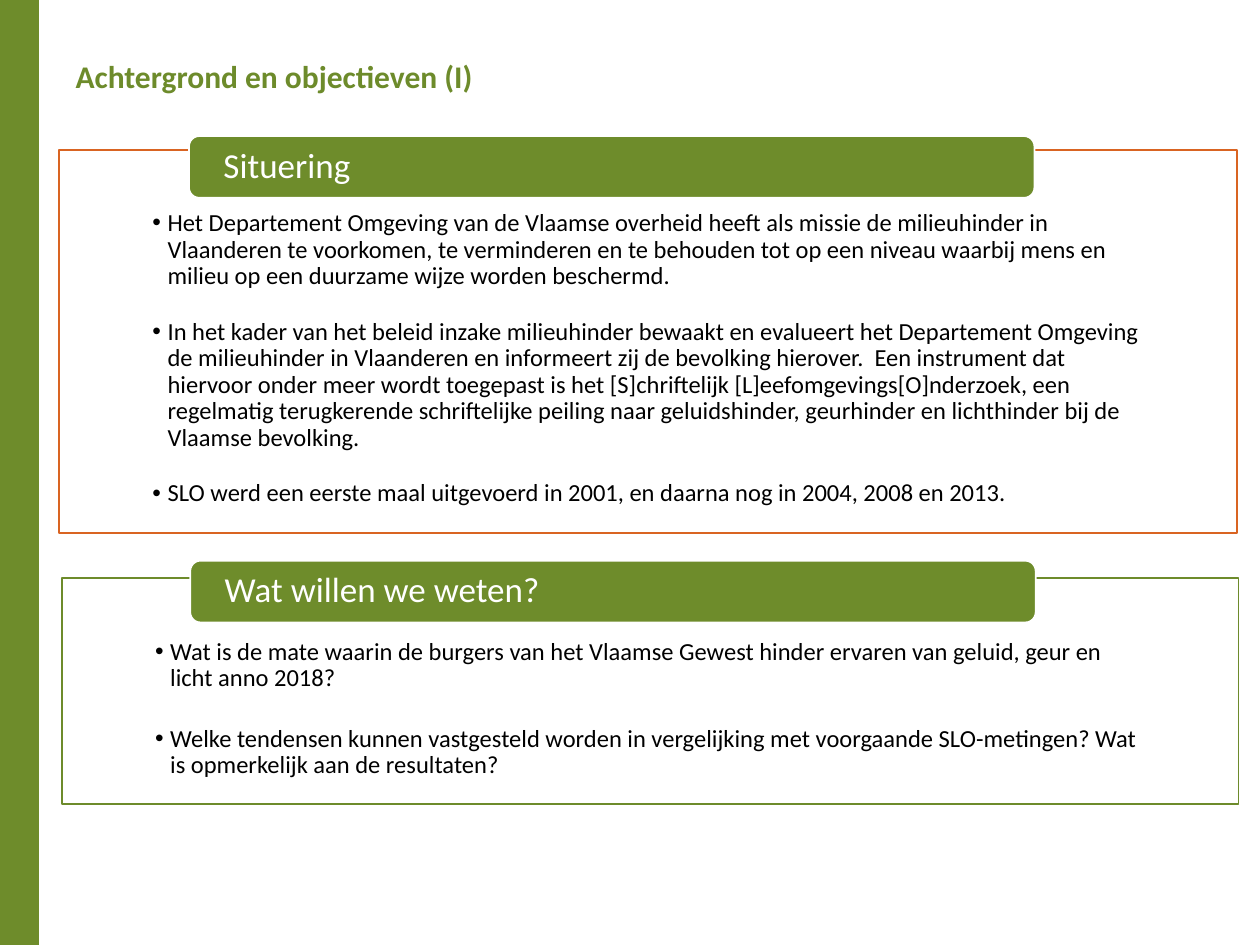
import pptx
import pptx.dml.color
import pptx.enum.shapes
import pptx.enum.text
import pptx.util
from lxml import etree

Inches, Pt = pptx.util.Inches, pptx.util.Pt
RGB = pptx.dml.color.RGBColor.from_string
SHAPE = pptx.enum.shapes.MSO_SHAPE
ALIGN = pptx.enum.text.PP_ALIGN
ANCHOR = pptx.enum.text.MSO_ANCHOR
AUTOSIZE = pptx.enum.text.MSO_AUTO_SIZE


class Theme:
    font = "Calibri"
    bar, title = RGB("6E8C2B"), RGB("6D8B2B")
    orange, white, black = RGB("D96422"), RGB("FFFFFF"), RGB("000000")
    title_size, heading_size, body_size = Pt(18), Pt(20), Pt(14)


def style(paragraph, size, color, bold=False):
    paragraph.font.name = Theme.font
    paragraph.font.size = size
    paragraph.font.bold = bold
    paragraph.font.color.rgb = color


def add_bullet(paragraph):
    properties = paragraph._p.get_or_add_pPr()
    properties.set("marL", str(Inches(0.12)))
    properties.set("indent", str(-Inches(0.12)))
    bullet = etree.SubElement(properties, pptx.oxml.ns.qn("a:buChar"))
    bullet.set("char", "•")


# Frame and heading as (left, top, width, height), then the bullets
sections = [
    ("Situering", (0.47, 1.19, 9.35, 3.04), (1.5, 1.08, 6.71, 0.49), Theme.orange, Pt(16.7), [
        "Het Departement Omgeving van de Vlaamse overheid heeft als missie de milieuhinder in "
        "Vlaanderen te voorkomen, te verminderen en te behouden tot op een niveau waarbij mens en "
        "milieu op een duurzame wijze worden beschermd.",
        "In het kader van het beleid inzake milieuhinder bewaakt en evalueert het Departement "
        "Omgeving de milieuhinder in Vlaanderen en informeert zij de bevolking hierover.  Een "
        "instrument dat hiervoor onder meer wordt toegepast is het [S]chriftelijk "
        "[L]eefomgevings[O]nderzoek, een regelmatig terugkerende schriftelijke peiling naar "
        "geluidshinder, geurhinder en lichthinder bij de Vlaamse bevolking.",
        "SLO werd een eerste maal uitgevoerd in 2001, en daarna nog in 2004, 2008 en 2013.",
    ]),
    ("Wat willen we weten?", (0.49, 4.59, 9.34, 1.79), (1.51, 4.45, 6.71, 0.49), Theme.title, Pt(19.5), [
        "Wat is de mate waarin de burgers van het Vlaamse Gewest hinder ervaren van geluid, geur en "
        "licht anno 2018?",
        "Welke tendensen kunnen vastgesteld worden in vergelijking met voorgaande SLO-metingen? Wat "
        "is opmerkelijk aan de resultaten?",
    ]),
]

presentation = pptx.Presentation()
presentation.slide_width, presentation.slide_height = Inches(10), Inches(7.5)
slide = presentation.slides.add_slide(presentation.slide_layouts[3])

# Green side bar
side_bar = slide.shapes.add_shape(SHAPE.RECTANGLE, 0, 0, Inches(0.31), Inches(7.5))
side_bar.shadow.inherit = False
side_bar.fill.solid()
side_bar.fill.fore_color.rgb = Theme.bar
side_bar.line.fill.background()

# Title
title = slide.shapes.title
title.left, title.top, title.width, title.height = map(Inches, (0.5, 0.4, 3.38, 0.4))
title.text_frame.text = "Achtergrond en objectieven (I)"
title.text_frame.word_wrap = False
title.text_frame.auto_size = AUTOSIZE.NONE
title.text_frame.vertical_anchor = ANCHOR.MIDDLE
title.text_frame.paragraphs[0].alignment = ALIGN.LEFT
style(title.text_frame.paragraphs[0], Theme.title_size, Theme.title, bold=True)

# Framed lists, each with a heading over its top edge
for index, (heading, frame_box, heading_box, frame_color, gap, points) in enumerate(sections, 1):
    frame = slide.placeholders[index]
    frame.left, frame.top, frame.width, frame.height = map(Inches, frame_box)
    frame.fill.solid()
    frame.fill.fore_color.rgb = Theme.white
    frame.line.color.rgb = frame_color
    frame.line.width = Pt(1)
    content = frame.text_frame
    content.word_wrap = True
    content.auto_size = AUTOSIZE.NONE
    content.vertical_anchor = ANCHOR.TOP
    content.margin_left = content.margin_right = Inches(0.74)
    content.margin_top, content.margin_bottom = Inches(0.48), Inches(0.11)
    for number, point in enumerate(points):
        paragraph = content.add_paragraph() if number else content.paragraphs[0]
        paragraph.text = point
        add_bullet(paragraph)
        paragraph.line_spacing = 0.9
        paragraph.space_before = gap if number else Pt(0)
        paragraph.space_after = Pt(0)
        style(paragraph, Theme.body_size, Theme.black)

    banner = slide.shapes.add_shape(SHAPE.ROUNDED_RECTANGLE, *map(Inches, heading_box))
    banner.shadow.inherit = False
    banner.fill.solid()
    banner.fill.fore_color.rgb = Theme.bar
    banner.line.color.rgb = Theme.white
    banner.line.width = Pt(1)
    label = banner.text_frame
    label.text = heading
    label.word_wrap = True
    label.vertical_anchor = ANCHOR.MIDDLE
    label.margin_left = label.margin_right = Inches(0.25)
    label.margin_top = label.margin_bottom = 0
    label.paragraphs[0].alignment = ALIGN.LEFT
    label.paragraphs[0].line_spacing = 0.9
    style(label.paragraphs[0], Theme.heading_size, Theme.white)

presentation.save("out.pptx")
